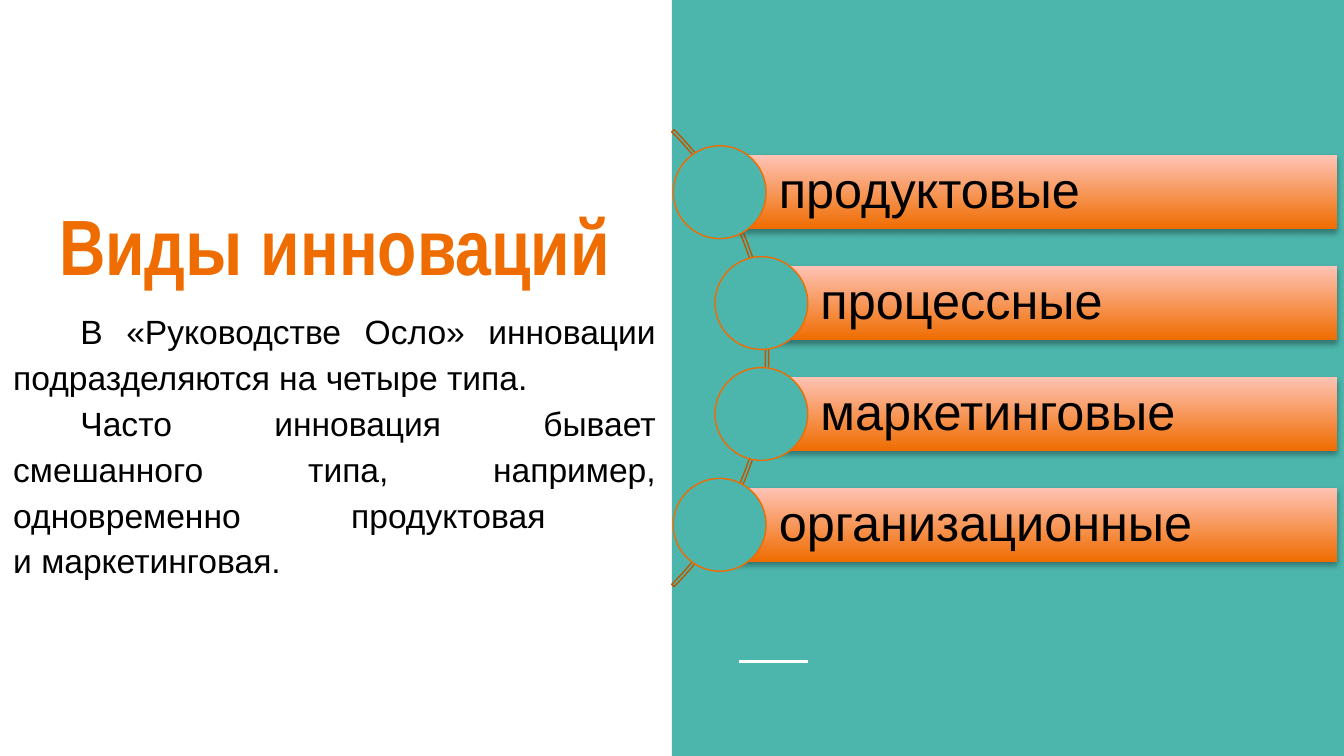
from dataclasses import dataclass

from lxml.etree import SubElement
from pptx import Presentation
from pptx.dml.color import RGBColor
from pptx.enum.shapes import MSO_CONNECTOR, MSO_SHAPE
from pptx.enum.text import MSO_ANCHOR, PP_ALIGN
from pptx.oxml.ns import qn
from pptx.shapes.autoshape import Shape
from pptx.slide import Slide
from pptx.text.text import TextFrame, _Paragraph
from pptx.util import Inches, Pt


@dataclass(frozen=True)
class Theme:
    teal: str = "4DB6AC"
    orange: str = "EF6C00"
    dark_orange: str = "BF5600"
    pink: str = "FFC3B5"
    white: str = "FFFFFF"
    black: str = "000000"
    body_font: str = "Arial"
    title_font: str = "Arial Narrow"
    title_size: float = 42
    body_size: float = 18
    kind_size: float = 27
    thin_line: float = 0.75


@dataclass(frozen=True)
class InnovationKind:
    label: str
    circle_left: float


THEME = Theme()
KINDS = [
    InnovationKind("продуктовые", 5.01),
    InnovationKind("процессные", 5.32),
    InnovationKind("маркетинговые", 5.32),
    InnovationKind("организационные", 5.01),
]
CIRCLE_SIZE = 0.69
BAR_HEIGHT = 0.55
BAR_RIGHT = 9.95
FIRST_CENTER = 1.43
KIND_STEP = 0.825


def color(value: str) -> RGBColor:
    return RGBColor.from_string(value)


def add_plain_shape(slide: Slide, preset: MSO_SHAPE, left: float, top: float,
                    width: float, height: float, fill: str | None = None,
                    outline: str | None = None) -> Shape:
    shape = slide.shapes.add_shape(
        preset, Inches(left), Inches(top), Inches(width), Inches(height))
    shape.shadow.inherit = False
    if fill:
        shape.fill.solid()
        shape.fill.fore_color.rgb = color(fill)
    else:
        shape.fill.background()
    if outline:
        shape.line.color.rgb = color(outline)
        shape.line.width = Pt(THEME.thin_line)
    else:
        shape.line.fill.background()
    return shape


def set_insets(frame: TextFrame, left: float, other: float) -> None:
    frame.word_wrap = True
    frame.margin_left = Inches(left)
    frame.margin_top = frame.margin_right = frame.margin_bottom = Inches(other)


def add_run(paragraph: _Paragraph, text: str, size: float, ink: str,
            font: str = THEME.body_font, bold: bool = False) -> None:
    run = paragraph.add_run()
    run.text = text
    run.font.size = Pt(size)
    run.font.name = font
    run.font.bold = bold
    run.font.color.rgb = color(ink)


def add_text_box(slide: Slide, left: float, top: float, width: float,
                 height: float) -> TextFrame:
    frame = slide.shapes.add_textbox(
        Inches(left), Inches(top), Inches(width), Inches(height)).text_frame
    set_insets(frame, 0.1, 0.1)
    return frame


def add_drop_shadow(shape: Shape) -> None:
    effects = shape._element.spPr.find(qn("a:effectLst"))
    shadow = SubElement(effects, qn("a:outerShdw"), blurRad=str(Pt(3.1)),
                        dist=str(Pt(1.8)), dir="5400000", rotWithShape="0")
    tint = SubElement(shadow, qn("a:srgbClr"), val=THEME.black)
    SubElement(tint, qn("a:alpha"), val="35000")


def add_kind(slide: Slide, kind: InnovationKind, center: float) -> None:
    bar_left = kind.circle_left + CIRCLE_SIZE / 2
    bar = add_plain_shape(slide, MSO_SHAPE.RECTANGLE, bar_left,
                          center - BAR_HEIGHT / 2, BAR_RIGHT - bar_left, BAR_HEIGHT)
    bar.fill.gradient()
    bar.fill.gradient_angle = 90
    for stop, shade in zip(bar.fill.gradient_stops, (THEME.orange, THEME.pink)):
        stop.color.rgb = color(shade)
    add_drop_shadow(bar)

    frame = bar.text_frame
    set_insets(frame, 0.44, 0.07)
    frame.vertical_anchor = MSO_ANCHOR.MIDDLE
    label = frame.paragraphs[0]
    label.alignment = PP_ALIGN.LEFT
    label.line_spacing = 0.9
    add_run(label, kind.label, THEME.kind_size, THEME.black)

    add_plain_shape(slide, MSO_SHAPE.OVAL, kind.circle_left, center - CIRCLE_SIZE / 2,
                    CIRCLE_SIZE, CIRCLE_SIZE, THEME.teal, THEME.orange)


def add_body_paragraph(paragraph: _Paragraph, lines: list[str]) -> None:
    paragraph.alignment = PP_ALIGN.JUSTIFY
    paragraph.line_spacing = 1.14
    properties = paragraph._p.get_or_add_pPr()
    properties.set("marL", "0")
    properties.set("indent", str(Inches(0.5)))
    for index, line in enumerate(lines):
        if index:
            paragraph.add_line_break()
        add_run(paragraph, line, THEME.body_size, THEME.black)


def main() -> None:
    deck = Presentation()
    deck.slide_width, deck.slide_height = Inches(10), Inches(5.625)
    slide = deck.slides.add_slide(deck.slide_layouts[6])

    # Right panel with its short rule
    add_plain_shape(slide, MSO_SHAPE.RECTANGLE, 5, 0, 5, 5.625, THEME.teal)
    rule = slide.shapes.add_connector(
        MSO_CONNECTOR.STRAIGHT, Inches(5.5), Inches(4.92), Inches(6.01), Inches(4.92))
    rule.line.color.rgb = color(THEME.white)
    rule.line.width = Pt(1.5)
    SubElement(rule._element.spPr, qn("a:effectLst"))

    # Title
    title = add_text_box(slide, 0.28, 1.35, 4.42, 0.92)
    title.vertical_anchor = MSO_ANCHOR.BOTTOM
    title.paragraphs[0].alignment = PP_ALIGN.CENTER
    add_run(title.paragraphs[0], "Виды инноваций", THEME.title_size, THEME.orange,
            THEME.title_font, bold=True)

    # Explanation
    body = add_text_box(slide, 0, 2.17, 4.98, 2.11)
    add_body_paragraph(body.paragraphs[0], [
        "В «Руководстве Осло» инновации подразделяются на четыре типа."])
    add_body_paragraph(body.add_paragraph(), [
        "Часто инновация бывает смешанного типа, например, одновременно продуктовая ",
        "и маркетинговая."])

    # Arc and the four kinds of innovation along it
    arc = add_plain_shape(slide, MSO_SHAPE.BLOCK_ARC, 0.91, 0.26, 4.81, 4.81,
                          outline=THEME.dark_orange)
    for index, adjustment in enumerate((189, 27, 0.005)):
        arc.adjustments[index] = adjustment
    for index, kind in enumerate(KINDS):
        add_kind(slide, kind, FIRST_CENTER + index * KIND_STEP)

    deck.save("out.pptx")


if __name__ == "__main__":
    main()
